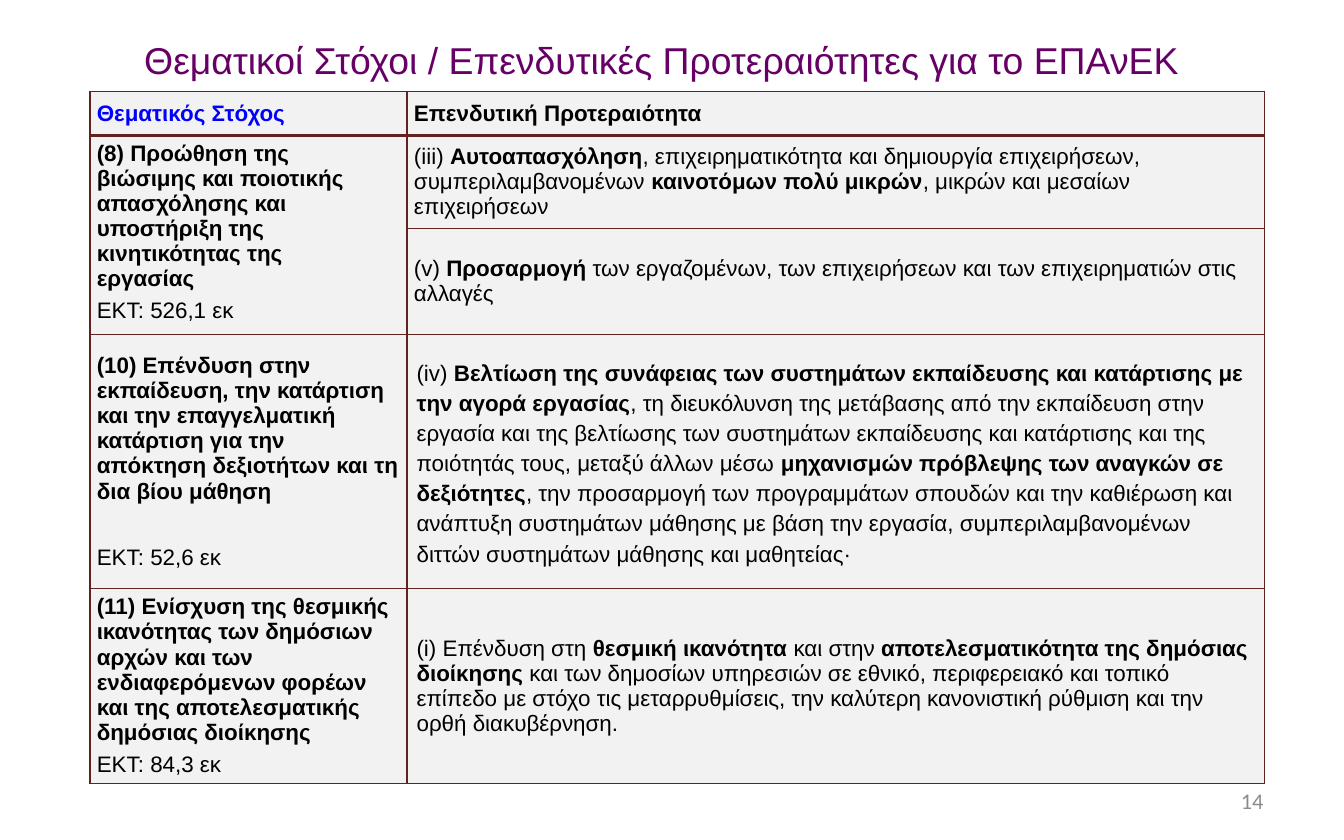
from pptx import Presentation
from pptx.dml.color import RGBColor
from pptx.enum.text import MSO_ANCHOR, PP_ALIGN
from pptx.oxml import parse_xml
from pptx.oxml.ns import nsdecls
from pptx.util import Inches, Pt

EDGE, FILL = "602320", "F2F2F2"
COLS = [2.36, 6.38]
ROWS = [0.33, 0.69, 0.79, 1.89, 1.45]

# Asterisks enclose bold words; each string is one paragraph
HEAD = ["*Θεματικός Στόχος*", "*Επενδυτική Προτεραιότητα*"]
GOAL_8 = [
    "*(8) Προώθηση της*", "*βιώσιμης και ποιοτικής*", "*απασχόλησης και*",
    "*υποστήριξη της*", "*κινητικότητας της*", "*εργασίας*",
    "ΕΚΤ: 526,1 εκ",
]
GOAL_10 = [
    "*(10) Επένδυση στην εκπαίδευση, την κατάρτιση και την επαγγελματική "
    "κατάρτιση για την απόκτηση δεξιοτήτων και τη δια βίου μάθηση*",
    "ΕΚΤ: 52,6 εκ",
]
GOAL_11 = [
    "*(11) Ενίσχυση της θεσμικής ικανότητας των δημόσιων αρχών και των "
    "ενδιαφερόμενων φορέων και της αποτελεσματικής δημόσιας διοίκησης*",
    "ΕΚΤ: 84,3 εκ",
]
AIM_III = (
    "(iii) *Αυτοαπασχόληση*, επιχειρηματικότητα και δημιουργία επιχειρήσεων, "
    "συμπεριλαμβανομένων *καινοτόμων πολύ μικρών*, μικρών και μεσαίων "
    "επιχειρήσεων"
)
AIM_V = (
    "(v) *Προσαρμογή* των εργαζομένων, των επιχειρήσεων και των "
    "επιχειρηματιών στις αλλαγές"
)
AIM_IV = (
    "(iv) *Βελτίωση της συνάφειας των συστημάτων εκπαίδευσης και κατάρτισης "
    "με την αγορά εργασίας*, τη διευκόλυνση της μετάβασης από την εκπαίδευση "
    "στην εργασία και της βελτίωσης των συστημάτων εκπαίδευσης και κατάρτισης "
    "και της ποιότητάς τους, μεταξύ άλλων μέσω *μηχανισμών πρόβλεψης των "
    "αναγκών σε δεξιότητες*, την προσαρμογή των προγραμμάτων σπουδών και την "
    "καθιέρωση και ανάπτυξη συστημάτων μάθησης με βάση την εργασία, "
    "συμπεριλαμβανομένων διττών συστημάτων μάθησης και μαθητείας·"
)
AIM_I = (
    "(i) Επένδυση στη *θεσμική ικανότητα *και στην *αποτελεσματικότητα της "
    "δημόσιας διοίκησης* και των δημοσίων υπηρεσιών σε εθνικό, περιφερειακό "
    "και τοπικό επίπεδο με στόχο τις μεταρρυθμίσεις, την καλύτερη κανονιστική "
    "ρύθμιση και την ορθή διακυβέρνηση."
)


def paint(font, size, color, bold=False, name="Arial"):
    font.name, font.size, font.bold = name, Pt(size), bold
    font.color.rgb = RGBColor.from_string(color)


def place(shape, box):
    shape.left, shape.top, shape.width, shape.height = map(Inches, box)


def write(para, text, color="000000"):
    """Fill a paragraph, with bold between asterisks."""
    for i, part in enumerate(text.split("*")):
        if part:
            run = para.add_run()
            run.text = part
            paint(run.font, 12, color, bold=i % 2 == 1)


def frame(cell, row):
    """Draw the four cell borders, thicker below the header."""
    thick = {"T": row == 1, "B": row == 0}
    props = cell._tc.get_or_add_tcPr()
    for side in "LRTB":
        width = Pt(2 if thick.get(side) else 1)
        props.append(parse_xml(
            f'<a:ln{side} {nsdecls("a")} w="{width}"><a:solidFill>'
            f'<a:srgbClr val="{EDGE}"/></a:solidFill></a:ln{side}>'))


def fill_cell(cell, texts, color="000000", side=0.05, before=2, after=2,
              line=None):
    cell.vertical_anchor = MSO_ANCHOR.MIDDLE
    cell.margin_left = cell.margin_right = Inches(side)
    cell.margin_top = cell.margin_bottom = 0
    body = cell.text_frame
    for i, text in enumerate(texts):
        para = body.paragraphs[0] if i == 0 else body.add_paragraph()
        para.space_before, para.space_after = Pt(before), Pt(after)
        if line:
            para.line_spacing = line
        write(para, text, color)
    return body.paragraphs


def add_title(slide, box):
    title = slide.shapes.title
    place(title, box)
    body = title.text_frame
    body.margin_left = body.margin_right = 0
    body.margin_top = body.margin_bottom = 0
    body.text = "Θεματικοί Στόχοι / Επενδυτικές Προτεραιότητες για το ΕΠΑνΕΚ"
    para = body.paragraphs[0]
    para.alignment = PP_ALIGN.CENTER
    paint(para.runs[0].font, 20, "660066")


def add_goals(slide, box):
    table = slide.shapes.add_table(
        len(ROWS), len(COLS), *map(Inches, box)).table
    table.first_row = table.horz_banding = False
    for col, width in zip(table.columns, COLS):
        col.width = Inches(width)
    for row, height in zip(table.rows, ROWS):
        row.height = Inches(height)
    for r in range(len(ROWS)):
        for c in range(len(COLS)):
            cell = table.cell(r, c)
            frame(cell, r)
            cell.fill.solid()
            cell.fill.fore_color.rgb = RGBColor.from_string(FILL)
    table.cell(1, 0).merge(table.cell(2, 0))

    # Header
    fill_cell(table.cell(0, 0), HEAD[:1], "0000FF")
    fill_cell(table.cell(0, 1), HEAD[1:])

    # Goals, with tight lines in the first and a wide gap in the second
    lines = fill_cell(table.cell(1, 0), GOAL_8, line=0.7)
    lines[-1].line_spacing = 1.0
    lines = fill_cell(table.cell(3, 0), GOAL_10)
    lines[-1].space_before = Pt(20)
    fill_cell(table.cell(4, 0), GOAL_11)

    # Priorities
    fill_cell(table.cell(1, 1), [AIM_III])
    fill_cell(table.cell(2, 1), [AIM_V])
    fill_cell(table.cell(3, 1), [AIM_IV], side=0.07, before=6, after=6,
              line=1.2)
    fill_cell(table.cell(4, 1), [AIM_I], side=0.07, before=2.4, after=0)


def add_number(slide, box):
    body = slide.shapes.add_textbox(*map(Inches, box)).text_frame
    body.word_wrap = True
    body.vertical_anchor = MSO_ANCHOR.MIDDLE
    body.text = "14"
    para = body.paragraphs[0]
    para.alignment = PP_ALIGN.RIGHT
    paint(para.runs[0].font, 12, "8C8C8C", name="Calibri")


def main():
    deck = Presentation()
    deck.slide_width, deck.slide_height = Inches(10), Inches(6.25)
    slide = deck.slides.add_slide(deck.slide_layouts[5])
    add_title(slide, (0.51, 0.24, 8.83, 0.4))
    add_goals(slide, (0.67, 0.68, sum(COLS), sum(ROWS)))
    add_number(slide, (7.17, 5.79, 2.33, 0.33))
    deck.save("out.pptx")


if __name__ == "__main__":
    main()
